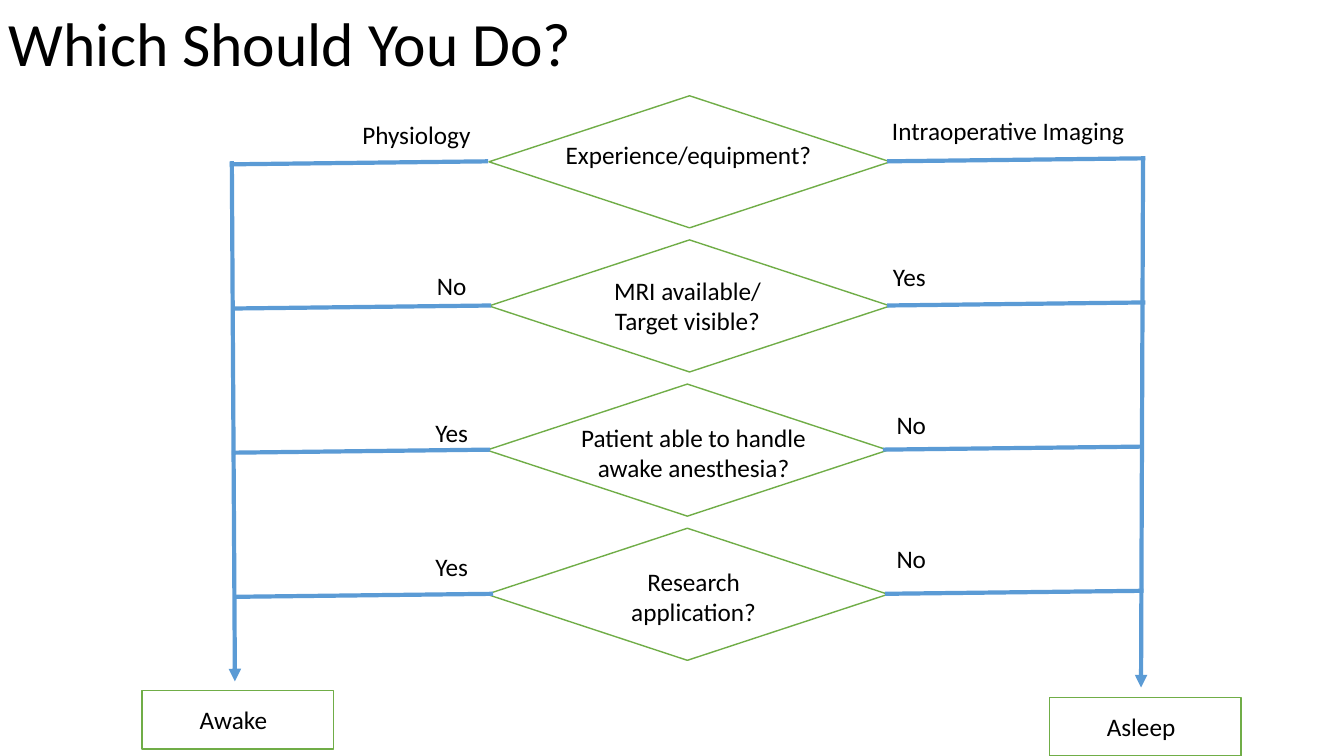
from dataclasses import dataclass

from lxml import etree
from pptx import Presentation
from pptx import util as u
from pptx.dml import color
from pptx.enum import shapes, text
from pptx.oxml import ns

WIDTH, HEIGHT = u.Inches(13.33), u.Inches(7.5)
FONT = "Calibri"
BLACK, WHITE, GREEN, BLUE = "000000", "FFFFFF", "70AD47", "5B9BD5"
FIRST_ROW, ROW_PITCH = 12.67, 19.07
DIAMOND_W, DIAMOND_H = 29.85, 17.47
QUESTION_W, LINE_H = 21.45, 5.33
BRANCH_W, BRANCH_DROP, BRANCH_RISE = 19.22, 8.67, 0.4
OUTCOME_W, OUTCOME_H = 14.25, 7.73


@dataclass(frozen=True)
class Answer:
    wording: str
    left: float
    drop: float
    width: float
    branch_left: float


@dataclass(frozen=True)
class Question:
    lines: tuple[str, ...]
    diamond_left: float
    left: float
    drop: float
    height: float
    awake: Answer
    asleep: Answer


@dataclass(frozen=True)
class Outcome:
    wording: str
    left: float
    top: float
    path_start: tuple[float, float]
    path_end: tuple[float, float]


QUESTIONS = (
    Question(("Experience/equipment?",), 36.38, 40.5, 5.07, LINE_H,
             Answer("Physiology", 24.83, 2.4, 12.3, 17.1),
             Answer("Intraoperative Imaging", 65.4, 1.87, 19.2, 66)),
    Question(("MRI available/", "Target visible?"), 36.38, 40.43, 4, 9.47,
             Answer("No", 30.08, 3.33, 7.05, 17.33),
             Answer("Yes", 64.13, 2.13, 7.05, 66)),
    Question(("Patient able to handle awake anesthesia?",), 36.22, 40.88, 4.4, 9.47,
             Answer("Yes", 30.08, 3.73, 7.05, 17.25),
             Answer("No", 64.28, 2.67, 7.05, 65.7)),
    Question(("Research", "application?"), 36.22, 40.88, 4.4, 9.47,
             Answer("Yes", 30.08, 2.4, 7.05, 17.48),
             Answer("No", 64.28, 1.33, 7.05, 65.85)),
)

OUTCOMES = (
    Outcome("Awake", 10.58, 91.33, (17.25, 21.33), (17.48, 90.13)),
    Outcome("Asleep", 78.08, 92.27, (85.05, 20.93), (84.9, 90.93)),
)


def across(percent: float) -> int:
    return round(WIDTH * percent / 100)


def down(percent: float) -> int:
    return round(HEIGHT * percent / 100)


def paint(target, hex_value: str) -> None:
    target.rgb = color.RGBColor.from_string(hex_value)


def write(slide, lines: tuple[str, ...], left: float, top: float, width: float,
          height: float, size: int = 18, align=text.PP_ALIGN.CENTER) -> None:
    box = slide.shapes.add_textbox(across(left), down(top), across(width), down(height))
    frame = box.text_frame
    frame.word_wrap = True
    frame.text = "\n".join(lines)
    for paragraph in frame.paragraphs:
        paragraph.alignment = align
        paragraph.font.name = FONT
        paragraph.font.size = u.Pt(size)
        paint(paragraph.font.color, BLACK)


def outline(slide, kind, left: float, top: float, width: float, height: float) -> None:
    figure = slide.shapes.add_shape(kind, across(left), down(top), across(width), down(height))
    figure.shadow.inherit = False
    figure.fill.solid()
    paint(figure.fill.fore_color, WHITE)
    paint(figure.line.color, GREEN)
    figure.line.width = u.Pt(1)


def connect(slide, start: tuple[float, float], end: tuple[float, float],
            arrow: bool = False) -> None:
    link = slide.shapes.add_connector(
        shapes.MSO_CONNECTOR.STRAIGHT,
        across(start[0]), down(start[1]), across(end[0]), down(end[1]))
    paint(link.line.color, BLUE)
    link.line.width = u.Pt(3)
    if arrow:
        etree.SubElement(link.line._get_or_add_ln(), ns.qn("a:tailEnd"), type="triangle")
    etree.SubElement(link._element.spPr, ns.qn("a:effectLst"))


def draw_answer(slide, answer: Answer, row: float, level: float) -> None:
    connect(slide, (answer.branch_left + BRANCH_W, row + level),
            (answer.branch_left, row + level + BRANCH_RISE))
    write(slide, (answer.wording,), answer.left, row + answer.drop, answer.width, LINE_H)


def draw_question(slide, question: Question, row: float) -> None:
    outline(slide, shapes.MSO_SHAPE.FLOWCHART_DECISION,
            question.diamond_left, row, DIAMOND_W, DIAMOND_H)
    write(slide, question.lines, question.left, row + question.drop,
          QUESTION_W, question.height)
    draw_answer(slide, question.awake, row, BRANCH_DROP)
    draw_answer(slide, question.asleep, row, BRANCH_DROP - BRANCH_RISE)


def draw_outcome(slide, outcome: Outcome) -> None:
    connect(slide, outcome.path_start, outcome.path_end, arrow=True)
    outline(slide, shapes.MSO_SHAPE.RECTANGLE,
            outcome.left, outcome.top, OUTCOME_W, OUTCOME_H)
    write(slide, (outcome.wording,), outcome.left + 3.53, outcome.top + 1.2,
          6.75, LINE_H, align=text.PP_ALIGN.LEFT)


def main() -> None:
    deck = Presentation()
    deck.slide_width, deck.slide_height = WIDTH, HEIGHT
    slide = deck.slides.add_slide(deck.slide_layouts[6])
    write(slide, ("Which Should You Do?",), -0.08, 0, 95.1, 11.2, 44, text.PP_ALIGN.LEFT)
    for index, question in enumerate(QUESTIONS):
        draw_question(slide, question, FIRST_ROW + index * ROW_PITCH)
    for outcome in OUTCOMES:
        draw_outcome(slide, outcome)
    deck.save("out.pptx")


if __name__ == "__main__":
    main()
